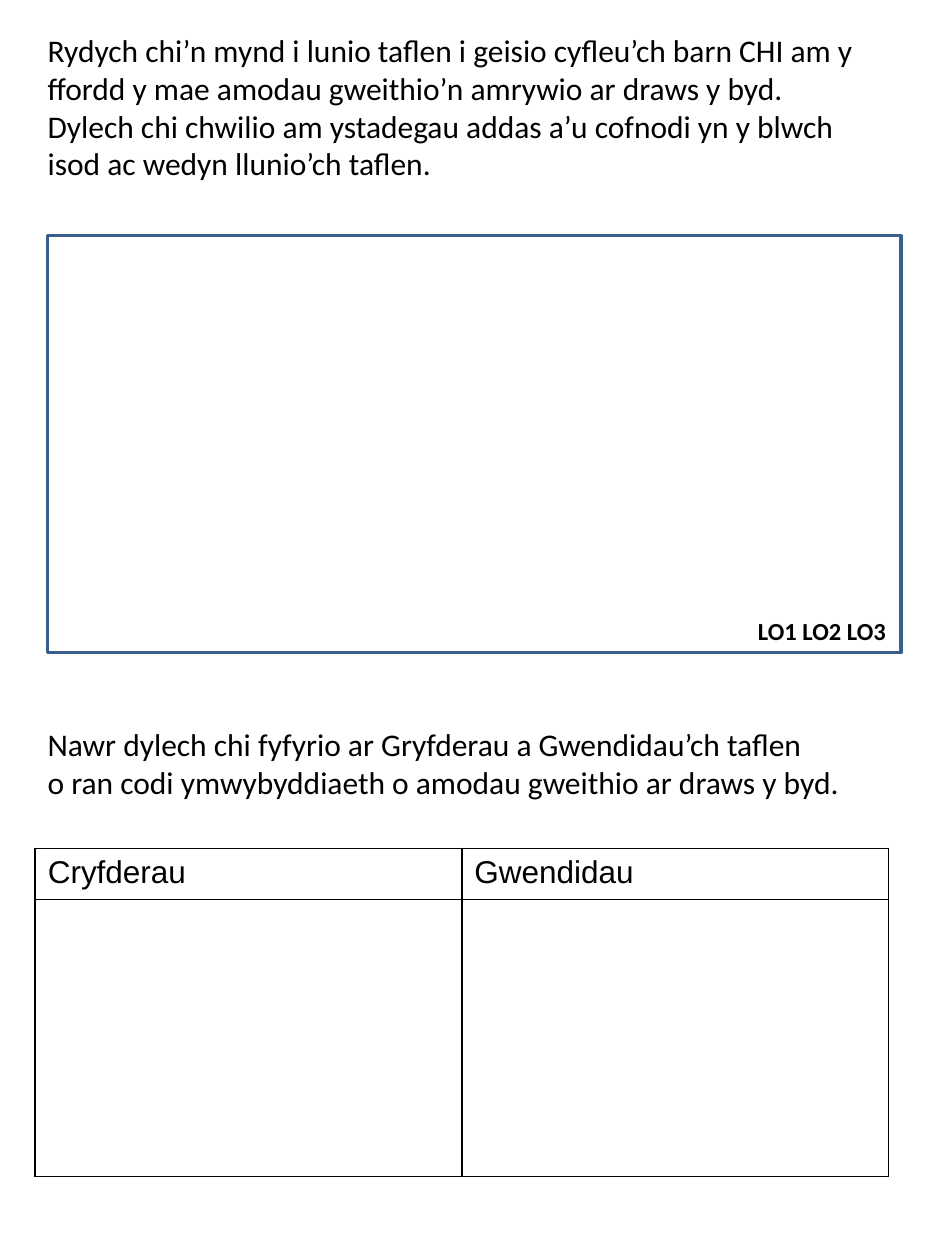
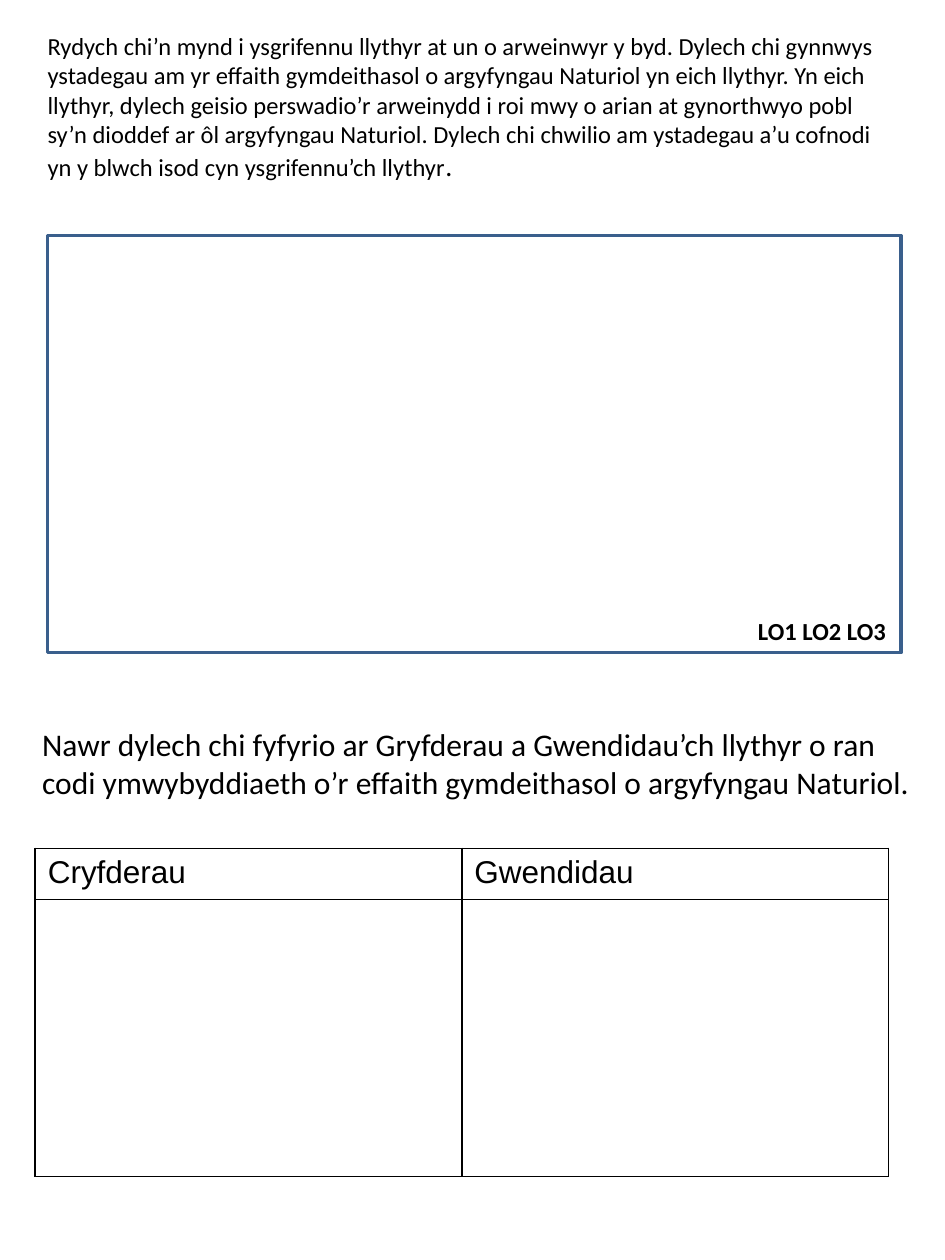
from lxml import etree
from pptx import Presentation
from pptx.dml.color import RGBColor
from pptx.enum.shapes import MSO_SHAPE
from pptx.enum.text import PP_ALIGN
from pptx.oxml.ns import qn
from pptx.util import Cm, Pt

RECTANGLE = MSO_SHAPE.RECTANGLE
LEFT, CENTER = PP_ALIGN.LEFT, PP_ALIGN.CENTER
BLACK, WHITE, BOX_BLUE = "000000", "FFFFFF", "3A5F8C"
MARGIN, CONTENT_WIDTH = 0.71, 17.2


def colour(value):
    return RGBColor.from_string(value)


def write(paragraph, text, size=18, font="Calibri", bold=False, align=LEFT):
    paragraph.alignment = align
    for number, line in enumerate(text.split("\n")):
        if number:
            paragraph.add_line_break()
        run = paragraph.add_run()
        run.text = line
        run.font.size = Pt(size)
        run.font.name = font
        run.font.bold = bold
        run.font.color.rgb = colour(BLACK)


worksheets = [
    {
        "task": [(
            "Rydych chi’n mynd i lunio taflen i geisio cyfleu’ch barn CHI am y ffordd "
            "y mae amodau gweithio’n amrywio ar draws y byd. Dylech chi chwilio am "
            "ystadegau addas a’u cofnodi yn y blwch isod ac wedyn llunio’ch taflen.", 18)],
        "task_height": 3.33,
        "reflection": "Nawr dylech chi fyfyrio ar Gryfderau a Gwendidau’ch taflen\n"
                      "o ran codi ymwybyddiaeth o amodau gweithio ar draws y byd.",
        "reflection_left": MARGIN,
        "reflection_width": 16.64,
    },
    {
        "task": [(
            "Rydych chi’n mynd i ysgrifennu llythyr at un o arweinwyr y byd. Dylech chi "
            "gynnwys ystadegau am yr effaith gymdeithasol o argyfyngau Naturiol yn eich "
            "llythyr. Yn eich llythyr, dylech geisio perswadio’r arweinydd i roi mwy o "
            "arian at gynorthwyo pobl sy’n dioddef ar ôl argyfyngau Naturiol. Dylech chi "
            "chwilio am ystadegau a’u cofnodi yn y blwch isod cyn ysgrifennu’ch llythyr", 14),
            (".", 16)],
        "task_height": 4.11,
        "reflection": "Nawr dylech chi fyfyrio ar Gryfderau a Gwendidau’ch llythyr o ran\n"
                      "codi ymwybyddiaeth o’r effaith gymdeithasol o argyfyngau Naturiol.",
        "reflection_left": 0.6,
        "reflection_width": 18.16,
    },
]

prs = Presentation()
prs.slide_width, prs.slide_height = Cm(19.05), Cm(25.4)
blank_layout = prs.slide_layouts[6]

for worksheet in worksheets:
    slide = prs.slides.add_slide(blank_layout)

    task = slide.shapes.add_textbox(
        Cm(MARGIN), Cm(0.5), Cm(CONTENT_WIDTH), Cm(worksheet["task_height"]))
    task.text_frame.word_wrap = True
    for text, size in worksheet["task"]:
        write(task.text_frame.paragraphs[0], text, size=size)

    statistics_box = slide.shapes.add_shape(
        RECTANGLE, Cm(0.96), Cm(4.75), Cm(CONTENT_WIDTH), Cm(8.41))
    statistics_box.shadow.inherit = False
    statistics_box.fill.solid()
    statistics_box.fill.fore_color.rgb = colour(WHITE)
    statistics_box.line.color.rgb = colour(BOX_BLUE)
    statistics_box.line.width = Pt(2)

    reflection = slide.shapes.add_textbox(
        Cm(worksheet["reflection_left"]), Cm(14.5),
        Cm(worksheet["reflection_width"]), Cm(1.8))
    reflection.text_frame.word_wrap = False
    write(reflection.text_frame.paragraphs[0], worksheet["reflection"])

    evaluation = slide.shapes.add_table(
        2, 2, Cm(MARGIN), Cm(17.1), Cm(CONTENT_WIDTH), Cm(6.62)).table
    evaluation.first_row = False
    evaluation.horz_banding = False
    evaluation.rows[0].height = Cm(1.03)
    evaluation.rows[1].height = Cm(5.59)
    for column, heading in enumerate(["Cryfderau", "Gwendidau"]):
        write(evaluation.cell(0, column).text_frame.paragraphs[0], heading, font="Arial")
    for cell in evaluation.iter_cells():
        properties = cell._tc.get_or_add_tcPr()
        for side in ("a:lnL", "a:lnR", "a:lnT", "a:lnB"):
            border = etree.SubElement(properties, qn(side), w=str(Pt(1)))
            border_fill = etree.SubElement(border, qn("a:solidFill"))
            etree.SubElement(border_fill, qn("a:srgbClr"), val=BLACK)
        cell.fill.background()

    outcomes = slide.shapes.add_textbox(Cm(15.01), Cm(12.29), Cm(3.12), Cm(0.86))
    outcomes.text_frame.word_wrap = False
    write(outcomes.text_frame.paragraphs[0], "LO1 LO2 LO3", size=14, bold=True, align=CENTER)

prs.save("out.pptx")
